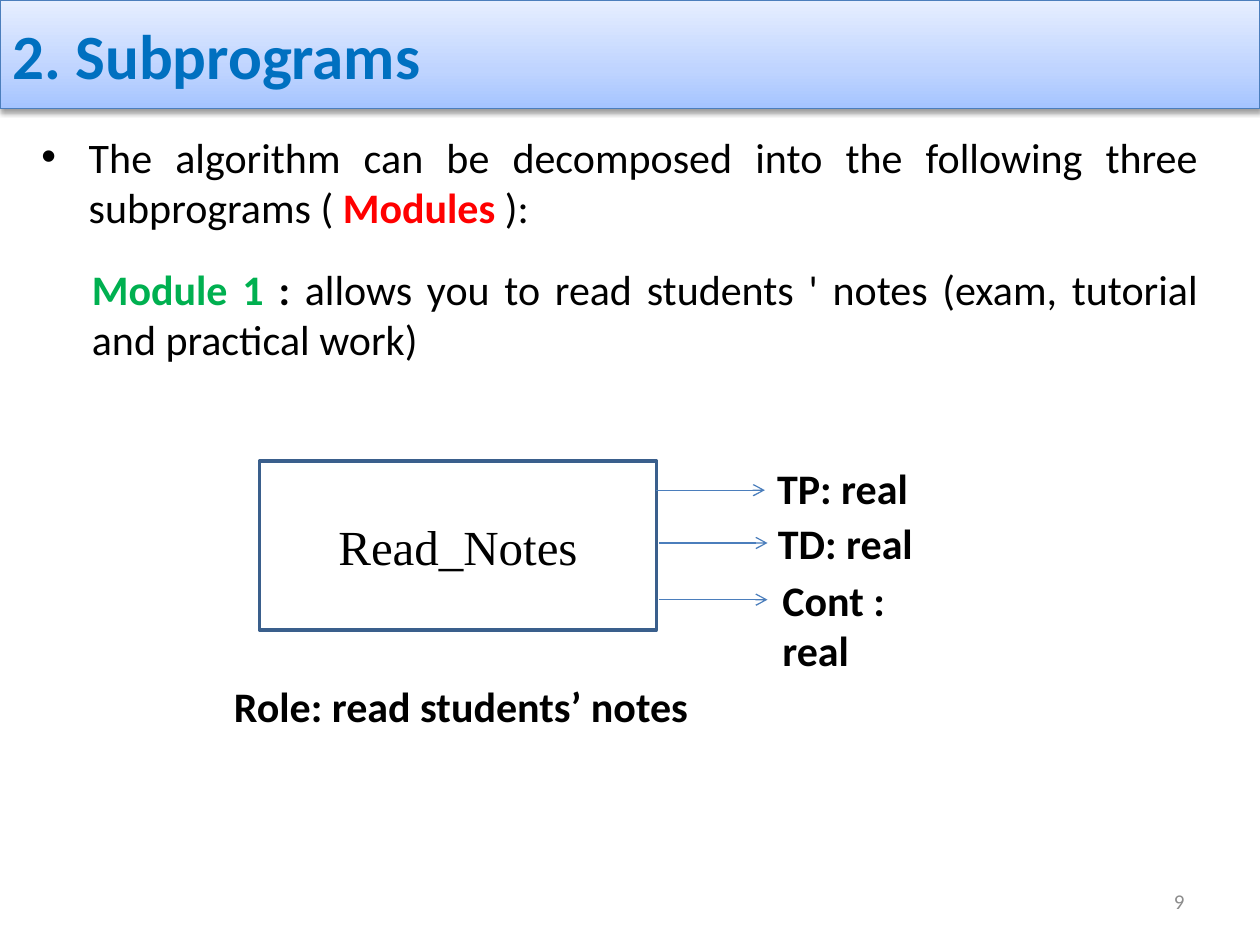
from dataclasses import dataclass

from lxml import etree
from pptx import Presentation
from pptx.dml.color import RGBColor
from pptx.enum.shapes import MSO_CONNECTOR, MSO_SHAPE
from pptx.enum.text import MSO_ANCHOR, MSO_AUTO_SIZE, PP_ALIGN
from pptx.oxml import parse_xml
from pptx.oxml.ns import nsdecls, qn
from pptx.util import Pt

STRAIGHT = MSO_CONNECTOR.STRAIGHT
RECTANGLE = MSO_SHAPE.RECTANGLE
MIDDLE, TOP = MSO_ANCHOR.MIDDLE, MSO_ANCHOR.TOP
NO_AUTOFIT = MSO_AUTO_SIZE.NONE
LEFT, CENTER, RIGHT, JUSTIFY = PP_ALIGN.LEFT, PP_ALIGN.CENTER, PP_ALIGN.RIGHT, PP_ALIGN.JUSTIFY


@dataclass(frozen=True)
class Theme:
    font: str = "Calibri"
    module_font: str = "Times New Roman"
    title_size: int = 36
    module_size: int = 28
    body_size: int = 24
    number_size: int = 12
    ink: str = "000000"
    title: str = "0070C0"
    emphasis: str = "FF0000"
    module: str = "00B050"
    number: str = "8C8C8C"
    accent: str = "4B7EBC"
    module_border: str = "3A5F8C"
    banner: tuple = ((0, "A4C4FF"), (35, "BFD4FF"), (100, "E6EEFF"))


class SlideBuilder:
    def __init__(self, slide, theme):
        self.slide = slide
        self.theme = theme

    def place(self, shape, left, top, width, height):
        shape.left, shape.top = Pt(left), Pt(top)
        shape.width, shape.height = Pt(width), Pt(height)

    def outline(self, shape, color, width):
        shape.line.color.rgb = RGBColor.from_string(color)
        shape.line.width = Pt(width)

    def add_text(self, paragraph, text, color=None, bold=False, size=None, font=None):
        run = paragraph.add_run()
        run.text = text
        run.font.name = font or self.theme.font
        run.font.size = Pt(size or self.theme.body_size)
        run.font.bold = bold
        run.font.color.rgb = RGBColor.from_string(color or self.theme.ink)

    def title(self, text, box):
        banner = self.slide.shapes.title
        self.place(banner, *box)
        properties = banner._element.spPr
        stops = "".join(
            f'<a:gs pos="{position * 1000}"><a:srgbClr val="{color}"/></a:gs>'
            for position, color in self.theme.banner
        )
        properties.append(parse_xml(
            f'<a:gradFill {nsdecls("a")} rotWithShape="1"><a:gsLst>{stops}</a:gsLst>'
            '<a:lin ang="16200000" scaled="0"/></a:gradFill>'
        ))
        self.outline(banner, self.theme.accent, 0.75)
        properties.append(parse_xml(
            f'<a:effectLst {nsdecls("a")}><a:outerShdw blurRad="{Pt(3.1)}" dist="{Pt(1.6)}" '
            'dir="5400000" rotWithShape="0"><a:srgbClr val="000000"><a:alpha val="38000"/>'
            '</a:srgbClr></a:outerShdw></a:effectLst>'
        ))
        frame = banner.text_frame
        frame.auto_size = NO_AUTOFIT
        frame.vertical_anchor = MIDDLE
        heading = frame.paragraphs[0]
        heading.alignment = LEFT
        self.add_text(heading, text, self.theme.title, True, self.theme.title_size)

    def body(self, items, box):
        content = self.slide.placeholders[1]
        self.place(content, *box)
        frame = content.text_frame
        frame.auto_size = NO_AUTOFIT
        for index, (margin, hanging, before, after, runs) in enumerate(items):
            paragraph = frame.add_paragraph() if index else frame.paragraphs[0]
            properties = paragraph._p.get_or_add_pPr()
            properties.set("marL", str(Pt(margin)))
            properties.set("indent", str(Pt(-hanging)))
            if hanging:
                etree.SubElement(properties, qn("a:buFont")).set("typeface", "Arial")
                etree.SubElement(properties, qn("a:buChar")).set("char", "•")
            else:
                etree.SubElement(properties, qn("a:buNone"))
            paragraph.alignment = JUSTIFY
            paragraph.space_before, paragraph.space_after = Pt(before), Pt(after)
            for run in runs:
                self.add_text(paragraph, *run)

    def module_box(self, name, box):
        module = self.slide.shapes.add_shape(RECTANGLE, *map(Pt, box))
        module.shadow.inherit = False
        module.fill.background()
        self.outline(module, self.theme.module_border, 2)
        module.text_frame.vertical_anchor = MIDDLE
        caption = module.text_frame.paragraphs[0]
        caption.alignment = CENTER
        self.add_text(caption, name, size=self.theme.module_size, font=self.theme.module_font)

    def arrow(self, left, top, length):
        arrow = self.slide.shapes.add_connector(
            STRAIGHT, Pt(left), Pt(top), Pt(left + length), Pt(top)
        )
        self.outline(arrow, self.theme.accent, 0.75)
        line = arrow._element.spPr.find(qn("a:ln"))
        etree.SubElement(line, qn("a:tailEnd")).set("type", "arrow")
        etree.SubElement(arrow._element.spPr, qn("a:effectLst"))

    def label(self, text, box, color=None, bold=True, size=None, alignment=LEFT, anchor=TOP):
        frame = self.slide.shapes.add_textbox(*map(Pt, box)).text_frame
        frame.word_wrap = True
        frame.vertical_anchor = anchor
        paragraph = frame.paragraphs[0]
        paragraph.alignment = alignment
        self.add_text(paragraph, text, color, bold, size)


def main():
    theme = Theme()
    presentation = Presentation()
    presentation.slide_width, presentation.slide_height = Pt(720), Pt(540)
    slide = presentation.slides.add_slide(presentation.slide_layouts[1])
    builder = SlideBuilder(slide, theme)

    builder.title("2. Subprograms", (0, 0, 720, 62))
    builder.body(
        [
            (27, 27, 0, 6, [
                ("The algorithm can be decomposed into the following three subprograms ( ",),
                ("Modules ", theme.emphasis, True),
                ("):",),
            ]),
            (28.8, 0, 12, 12, [
                ("Module 1 ", theme.module, True),
                (": ", theme.ink, True),
                ("allows you to read students ' notes (exam, tutorial and practical work)",),
            ]),
            (110, 0, 169, 12, [("Role: read students’ notes", theme.ink, True)]),
        ],
        (16.5, 71.3, 675.4, 438.5),
    )
    builder.module_box("Read_Notes", (148.3, 263.5, 226.8, 96.5))

    outputs = (
        ("TP: real", 375.1, 280.1, 437, 260.6, 92),
        ("TD: real", 376.6, 310.3, 437.4, 292.3, 94),
        ("Cont : real", 376.6, 342.7, 440, 324.7, 112.3),
    )
    for name, arrow_left, arrow_top, left, top, width in outputs:
        builder.arrow(arrow_left, arrow_top, 62)
        builder.label(name, (left, top, width, 36))

    builder.label("9", (516, 500.5, 168, 28.8), theme.number, False,
                  theme.number_size, RIGHT, MIDDLE)
    presentation.save("out.pptx")


if __name__ == "__main__":
    main()
